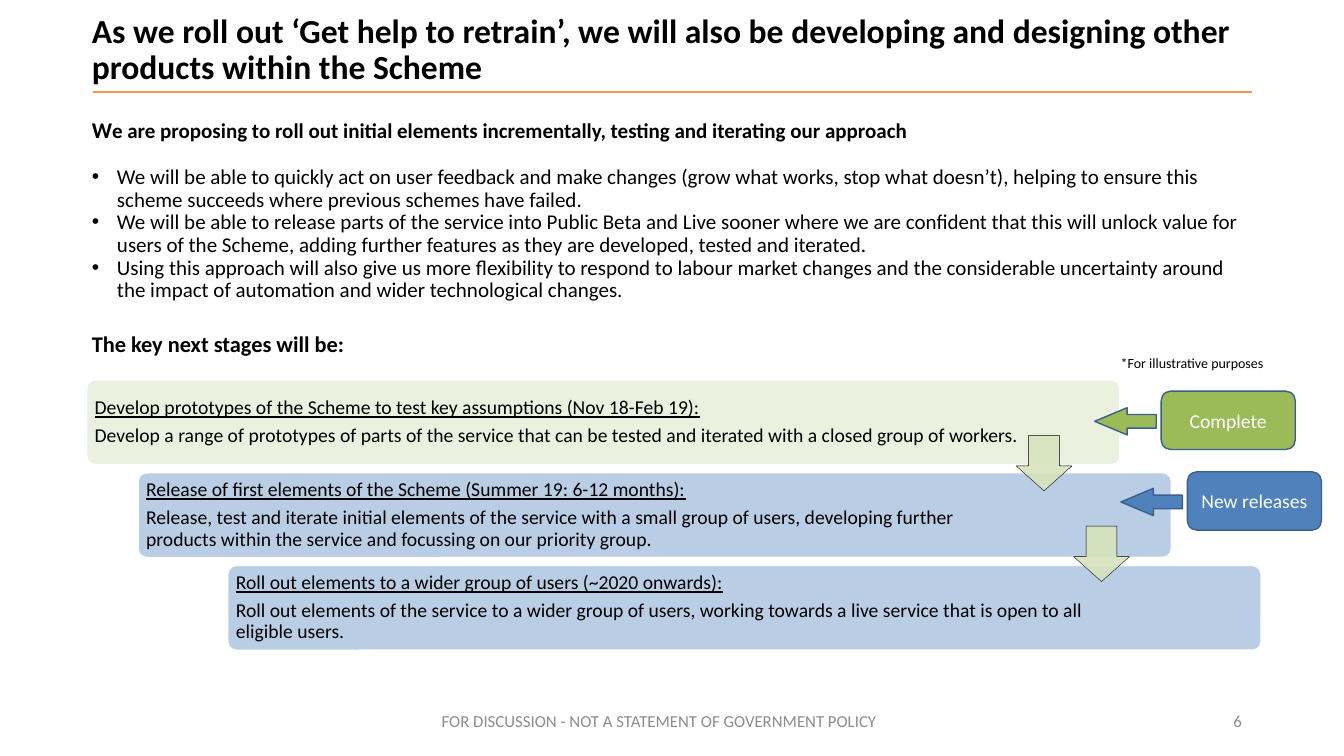
import pptx
import pptx.dml.color
import pptx.enum.shapes
import pptx.enum.text
import pptx.oxml.ns
import pptx.util
from dataclasses import dataclass
from lxml import etree

SHAPE = pptx.enum.shapes.MSO_SHAPE
ALIGN = pptx.enum.text.PP_ALIGN
ANCHOR = pptx.enum.text.MSO_ANCHOR
FIT = pptx.enum.text.MSO_AUTO_SIZE
qn = pptx.oxml.ns.qn


@dataclass(frozen=True)
class Theme:
    font: str = "Calibri"
    black: str = "000000"
    white: str = "FFFFFF"
    grey: str = "8C8C8C"
    orange: str = "F79646"
    green: str = "9BBB59"
    blue: str = "4F81BD"
    outline: str = "3A5F8C"
    pale_green: str = "EBF1DE"
    pale_blue: str = "B9CDE5"
    arrow_green: str = "D7E4BD"
    title: int = 24
    heading: int = 16
    body: int = 15
    stage: int = 14
    footer: int = 12
    note: int = 10


theme = Theme()
deck = pptx.Presentation()
deck.slide_width = pptx.util.Inches(13.333)
deck.slide_height = pptx.util.Inches(7.5)
page = deck.slides.add_slide(deck.slide_layouts[1])
shapes = page.shapes


def frame(left, top, width, height):
    """Turn percentages of the slide's size into lengths."""
    across, down = deck.slide_width / 100, deck.slide_height / 100
    return [round(n) for n in (left * across, top * down, width * across, height * down)]


def style(item, size=None, color=None, bold=None, fill=None, line=None, weight=1):
    """Format the text runs of a shape or paragraph, and a shape's fill and line."""
    paras = item.text_frame.paragraphs if hasattr(item, "text_frame") else [item]
    for span in (span for para in paras for span in para.runs):
        span.font.name = theme.font
        span.font.size = pptx.util.Pt(size)
        span.font.bold = bold
        span.font.color.rgb = pptx.dml.color.RGBColor.from_string(color)
    if fill:
        item.shadow.inherit = False
        item.fill.solid()
        item.fill.fore_color.rgb = pptx.dml.color.RGBColor.from_string(fill)
        item.line.color.rgb = pptx.dml.color.RGBColor.from_string(line)
        item.line.width = pptx.util.Pt(weight)


# Title and the rule below it
title = shapes.title
title.left, title.top, title.width, title.height = frame(6.08, 1.47, 87, 10.53)
title.text_frame.text = ("As we roll out ‘Get help to retrain’, we will also be developing "
                         "and designing other products within the Scheme")
title.text_frame.auto_size = FIT.NONE
title.text_frame.vertical_anchor = ANCHOR.MIDDLE
title.text_frame.paragraphs[0].alignment = ALIGN.LEFT
title.text_frame.paragraphs[0].line_spacing = 0.9
style(title, theme.title, theme.black, True)

left, top, width, _ = frame(6.9, 12.13, 86.25, 0)
rule = shapes.add_connector(pptx.enum.shapes.MSO_CONNECTOR.STRAIGHT, left, top, left + width, top)
rule.line.color.rgb = pptx.dml.color.RGBColor.from_string(theme.orange)
rule.line.width = pptx.util.Pt(1.5)
etree.SubElement(rule._element.spPr, qn("a:effectLst"))

# Body: text, size, bold, bulleted, space before
body_lines = [
    ("W", theme.heading, True, False, 0),
    ("We will be able to quickly act on user feedback and make changes (grow what works, "
     "stop what doesn’t), helping to ensure this scheme succeeds where previous schemes "
     "have failed.", theme.body, False, True, 16.5),
    ("We will be able to release parts of the service into Public Beta and Live sooner where "
     "we are confident that this will unlock value for users of the Scheme, adding further "
     "features as they are developed, tested and iterated.", theme.body, False, True, 0),
    ("Using this approach will also give us more flexibility to respond to labour market "
     "changes and the considerable uncertainty around the impact of automation and wider "
     "technological changes.", theme.body, False, True, 0),
    ("The key next stages will be:", theme.heading, True, False, 22),
]
body = page.placeholders[1]
body.left, body.top, body.width, body.height = frame(6.08, 15.07, 87, 74.93)
body.text_frame.text = "\n".join(line[0] for line in body_lines)
body.text_frame.auto_size = FIT.NONE
for para, (_, size, bold, bulleted, gap) in zip(body.text_frame.paragraphs, body_lines):
    properties = para._p.get_or_add_pPr()
    indent = pptx.util.Inches(0.25) if bulleted else 0
    properties.set("marL", str(indent))
    properties.set("indent", str(-indent))
    if bulleted:
        etree.SubElement(properties, qn("a:buFont")).set("typeface", "Arial")
        etree.SubElement(properties, qn("a:buChar")).set("char", "•")
    else:
        etree.SubElement(properties, qn("a:buNone"))
    para.line_spacing = 0.9
    para.space_before = pptx.util.Pt(gap)
    style(para, size, theme.black, bold)

# The opening line continues one point smaller than its first letter
opening = body.text_frame.paragraphs[0]
rest = opening.add_run()
rest.text = "e are proposing to roll out initial elements incrementally, testing and iterating our approach"
style(opening, theme.body, theme.black, True)
opening.runs[0].font.size = pptx.util.Pt(theme.heading)

# Footer, page number and note
for text, place, size, color, align, anchor in [
    ("FOR DISCUSSION - NOT A STATEMENT OF GOVERNMENT POLICY", (31.28, 92.67, 35.55, 5.33),
     theme.footer, theme.grey, ALIGN.CENTER, ANCHOR.MIDDLE),
    ("6", (70.65, 92.67, 22.5, 5.33), theme.footer, theme.grey, ALIGN.RIGHT, ANCHOR.MIDDLE),
    ("*For illustrative purposes", (82.65, 46.27, 12.75, 3.6),
     theme.note, theme.black, ALIGN.LEFT, ANCHOR.TOP),
]:
    box = shapes.add_textbox(*frame(*place))
    box.text_frame.text = text
    box.text_frame.word_wrap = True
    box.text_frame.vertical_anchor = anchor
    box.text_frame.paragraphs[0].alignment = align
    style(box, size, color)

# Stages: left edge, text width, fill, heading, description
stages = [
    (6.45, 70.13, theme.pale_green,
     "Develop prototypes of the Scheme to test key assumptions (Nov 18-Feb 19):",
     "Develop a range of prototypes of parts of the service that can be tested and iterated "
     "with a closed group of workers."),
    (10.28, 65.63, theme.pale_blue,
     "Release of first elements of the Scheme (Summer 19: 6-12 months):",
     "Release, test and iterate initial elements of the service with a small group of users, "
     "developing further products within the service and focussing on our priority group."),
    (16.95, 65.63, theme.pale_blue,
     "Roll out elements to a wider group of users (~2020 onwards):",
     "Roll out elements of the service to a wider group of users, working towards a live "
     "service that is open to all eligible users."),
]
for row, (left, text_width, fill, heading, description) in enumerate(stages):
    top = 50.27 + row * 12.27
    panel = shapes.add_shape(SHAPE.ROUNDED_RECTANGLE, *frame(left, top, 76.88, 11.2))
    panel.adjustments[0] = 0.1
    style(panel, fill=fill, line=theme.white)

    box = shapes.add_textbox(*frame(left + 0.15, top + 0.33, text_width, 10.53))
    words = box.text_frame
    words.text = f"{heading}\n{description}"
    words.word_wrap = True
    words.vertical_anchor = ANCHOR.MIDDLE
    words.margin_left = words.margin_right = pptx.util.Inches(0.06)
    words.margin_top = words.margin_bottom = pptx.util.Inches(0.06)
    for para in words.paragraphs:
        para.line_spacing = 0.9
        para.space_after = pptx.util.Pt(0.35 * theme.stage)
    style(box, theme.stage, theme.black)
    words.paragraphs[0].runs[0].font.underline = True

# Translucent arrows from stage to stage
for left, top in [(75.6, 57.6), (79.88, 69.6)]:
    arrow = shapes.add_shape(SHAPE.DOWN_ARROW, *frame(left, top, 4.16, 7.33))
    arrow.adjustments[0], arrow.adjustments[1] = 0.55, 0.45
    style(arrow, fill=theme.arrow_green, line=theme.black, weight=0.25)
    tint = arrow._element.spPr.find(qn("a:solidFill"))[0]
    etree.SubElement(tint, qn("a:alpha")).set("val", "90000")

# Status labels, each with an arrow pointing at its stage
for text, left, top, fill in [
    ("New releases", 88.35, 62.4, theme.blue),
    ("Complete", 86.4, 51.73, theme.green),
]:
    label = shapes.add_shape(SHAPE.ROUNDED_RECTANGLE, *frame(left, top, 9.98, 7.73))
    label.text_frame.text = text
    label.text_frame.word_wrap = True
    label.text_frame.vertical_anchor = ANCHOR.MIDDLE
    label.text_frame.paragraphs[0].alignment = ALIGN.CENTER
    style(label, theme.stage, theme.white, fill=fill, line=theme.outline)

    pointer = shapes.add_shape(SHAPE.RIGHT_ARROW, *frame(left - 4.95, top + 2.2, 4.58, 3.6))
    pointer.rotation = 180
    pointer.adjustments[1] = 1.19
    style(pointer, fill=fill, line=theme.outline)

deck.save("out.pptx")
